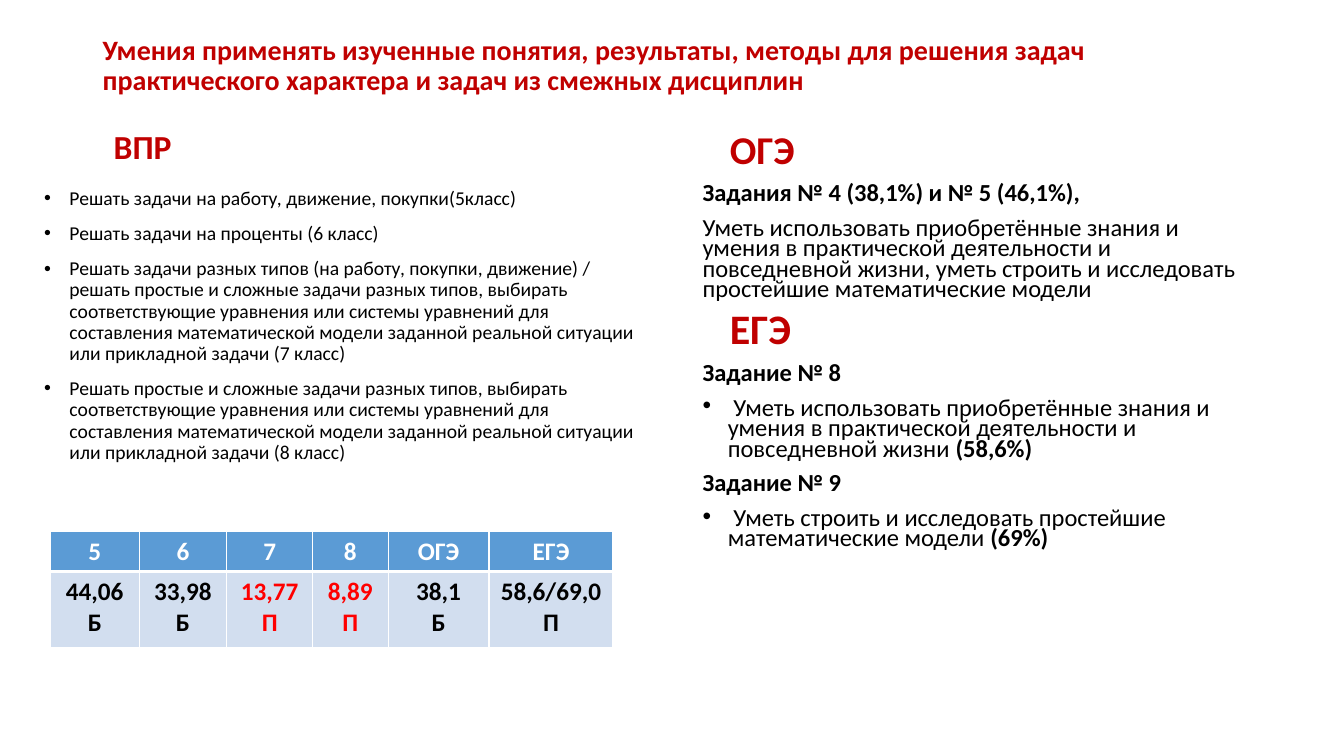
import pptx
import pptx.util
import pptx.dml.color
import pptx.enum.text
import pptx.oxml
import pptx.oxml.ns
from lxml import etree

Inches = pptx.util.Inches
Pt = pptx.util.Pt
ALIGN = pptx.enum.text.PP_ALIGN
ANCHOR = pptx.enum.text.MSO_ANCHOR
RED, BLACK, WHITE = "C00000", "000000", "FFFFFF"


def color(code):
    """Turn a hex string into a colour."""
    return pptx.dml.color.RGBColor.from_string(code)


def node(parent, tag, **attrs):
    """Add a drawing element under a parent."""
    return etree.SubElement(parent, pptx.oxml.ns.qn("a:" + tag), attrs)


def assign(target, values):
    """Set each value of a dict on the target."""
    for name, value in values.items():
        setattr(target, name, value)


class Deck:
    """Holds the style and the current slide."""

    def __init__(self, face):
        """Open a wide deck with one blank slide."""
        self.face = face
        self.prs = pptx.Presentation()
        assign(self.prs, {"slide_width": Inches(13.33), "slide_height": Inches(7.5)})
        self.slide = self.prs.slides.add_slide(self.prs.slide_layouts[6])

    def run(self, para, text, size, code, bold):
        """Add one styled run."""
        run = para.add_run()
        run.text = text
        assign(run.font, {"name": self.face, "size": Pt(size), "bold": bold})
        run.font.color.rgb = color(code)

    def para(self, para, runs, style, left=0, dot=False):
        """Fill a paragraph with runs, an indent and a bullet."""
        assign(para, style)
        for item in runs:
            self.run(para, *item)
        props = para._p.get_or_add_pPr()
        props.set("marL", str(Inches(left)))
        props.set("indent", str(Inches(-left if dot else 0)))
        if dot:
            node(props, "buFont", typeface="Arial")
            node(props, "buChar", char="•")

    def text(self, box, paras, style, anchor=ANCHOR.TOP):
        """Add a text box of paragraphs."""
        frame = self.slide.shapes.add_textbox(*map(Inches, box)).text_frame
        assign(frame, {"word_wrap": True, "vertical_anchor": anchor})
        for i, (runs, extra) in enumerate(paras):
            para = frame.add_paragraph() if i else frame.paragraphs[0]
            self.para(para, runs, style, **extra)

    def cell(self, cell, lines, fill, code, edges):
        """Fill a cell with centred bold lines and white edges."""
        props = cell._tc.get_or_add_tcPr()
        for side, width in zip("LRTB", edges):
            line = node(props, "ln" + side, w=str(Pt(width)))
            node(node(line, "solidFill"), "srgbClr", val=WHITE)
        cell.fill.solid()
        cell.fill.fore_color.rgb = color(fill)
        frame = cell.text_frame
        for i, text in enumerate(lines):
            para = frame.add_paragraph() if i else frame.paragraphs[0]
            self.para(para, [(text, 18, code, True)], {"alignment": ALIGN.CENTER})

    def table(self, box, cols, rows, data):
        """Add a table with a header row over a value row."""
        grid = self.slide.shapes.add_table(
            len(rows), len(cols), *map(Inches, box)).table
        for col, width in zip(grid.columns, cols):
            col.width = Inches(width)
        for row, height in zip(grid.rows, rows):
            row.height = Inches(height)
        for i, (head, value, mark, code) in enumerate(data):
            self.cell(grid.cell(0, i), [head], "5B9BD5", WHITE, (1, 1, 1, 3))
            self.cell(grid.cell(1, i), [value, mark], "D2DEEF", code, (1, 1, 3, 1))


def main():
    """Build the slide and save it."""
    deck = Deck("Calibri")
    dot = {"left": 0.25, "dot": True}
    tight = {"line_spacing": 0.9}
    body = {"line_spacing": 0.9, "space_before": Pt(10)}
    dense = {"line_spacing": 0.7, "space_before": Pt(10)}

    title = ("Умения применять изученные понятия, результаты, методы для решения "
             "задач практического характера и задач из смежных дисциплин")
    deck.text((0.92, 0.4, 11.5, 0.8 - 0.28), [([(title, 20, RED, True)], {})],
              tight, ANCHOR.MIDDLE)

    model = ("ешать простые и сложные задачи разных типов, выбирать "
             "соответствующие уравнения или системы уравнений для составления "
             "математической модели заданной реальной ситуации или прикладной "
             "задачи ")
    tasks = [
        "Решать задачи на работу, движение, покупки(5класс)",
        "Решать задачи на проценты (6 класс)",
        "Решать задачи разных типов (на работу, покупки, движение) / р"
        + model + "(7 класс)",
        "Р" + model + "(8 класс)",
    ]
    deck.text((0.34, 1.82, 6.22, 5.34),
              [([(task, 14, BLACK, False)], dot) for task in tasks], body)
    deck.text((1.03, 1.2, 5.64, 0.5), [([("ВПР", 24, RED, True)], {})],
              body, ANCHOR.BOTTOM)

    deck.table((0.5, 5.27, 5.58, 1.07), (0.88, 0.87, 0.85, 0.75, 1, 1.23),
               (0.32, 0.75), [
        ("5", "44,06", "Б", BLACK),
        ("6", "33,98", "Б", BLACK),
        ("7", "13,77", "П", "FF0000"),
        ("8", "8,89", "П", "FF0000"),
        ("ОГЭ", "38,1", "Б", BLACK),
        ("ЕГЭ", "58,6/69,0", "П", BLACK),
    ])

    def plain(text, bold=False):
        """Give a black run of the right column."""
        return (text, 17.5, BLACK, bold)

    skill = ("Уметь использовать приобретённые знания и умения в практической "
             "деятельности и повседневной жизни")
    build = "меть строить и исследовать простейшие математические модели"
    head = {"left": 0.27}
    deck.text((6.87, 1.32, 5.67, 4.53), [
        ([("ОГЭ", 28.1, RED, True)], head),
        ([plain("Задания № 4 (38,1%) и № 5 (46,1%),", True)], {}),
        ([plain(skill + ", у" + build)], {}),
        ([("ЕГЭ", 30, RED, True)], head),
        ([plain("Задание № 8", True)], {}),
        ([plain(" " + skill + " "), plain("(58,6%)", True)], dot),
        ([plain("Задание № 9", True)], {}),
        ([plain(" У" + build + " "), plain("(69%)", True)], dot),
    ], dense)

    deck.prs.save("out.pptx")


if __name__ == "__main__":
    main()
